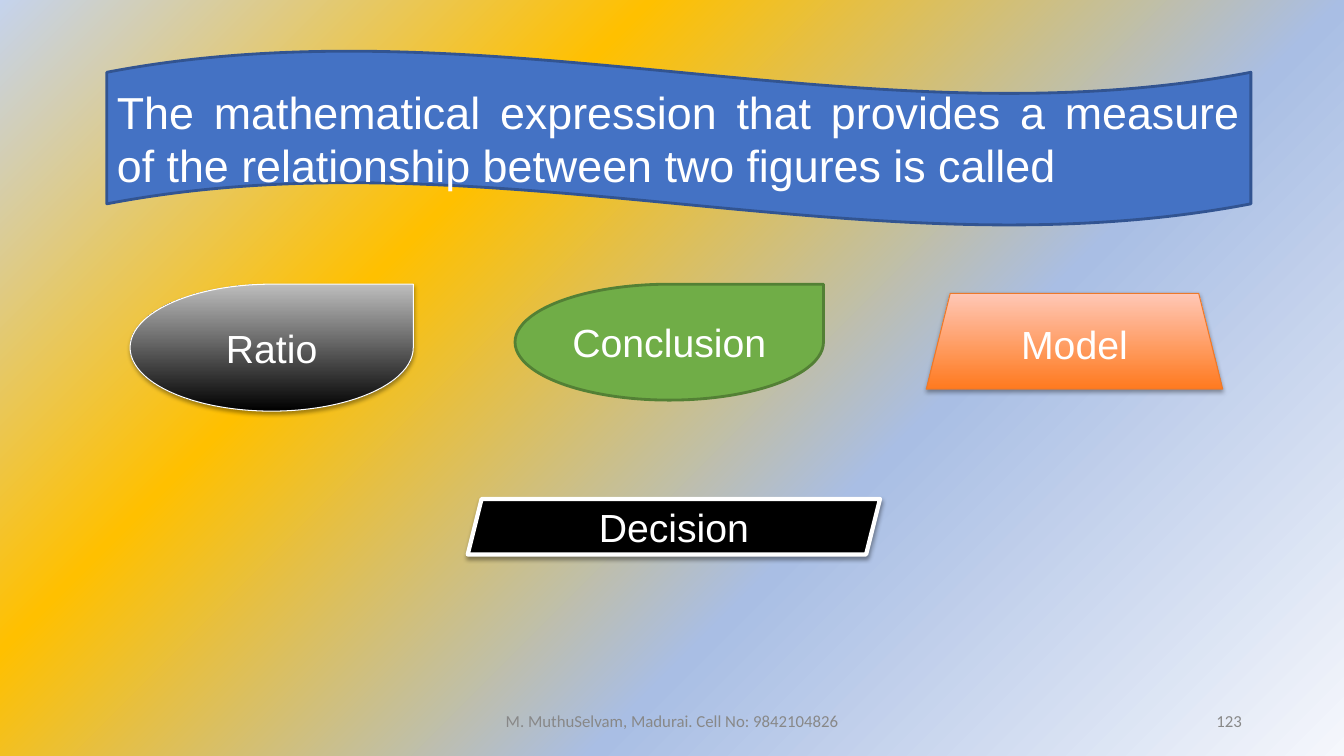
from dataclasses import dataclass

from lxml import etree
from pptx import Presentation
from pptx import util as u
from pptx.dml.color import RGBColor
from pptx.enum import shapes, text
from pptx.oxml import parse_xml
from pptx.oxml.ns import nsdecls, qn

WHITE = RGBColor(0xFF, 0xFF, 0xFF)
BLACK = RGBColor(0, 0, 0)
SILVER = RGBColor(0xBD, 0xBD, 0xBD)
GRAY = RGBColor(0x88, 0x88, 0x88)
BLUE = RGBColor(0x44, 0x72, 0xC4)
DARK_BLUE = RGBColor(0x32, 0x54, 0x91)
GREEN = RGBColor(0x70, 0xAD, 0x47)
DARK_GREEN = RGBColor(0x53, 0x80, 0x35)
ORANGE = RGBColor(0xFF, 0x7A, 0x1F)
PEACH = RGBColor(0xFF, 0xC7, 0xB6)
DARK_ORANGE = RGBColor(0xEC, 0x79, 0x2B)
GOLD = RGBColor(0xFF, 0xC0, 0x00)
PALE_BLUE = RGBColor(0xA9, 0xBE, 0xE4)
MIST = RGBColor(0xF5, 0xF7, 0xFC)
ICE = RGBColor(0xC5, 0xD3, 0xED)

BACKDROP = ((0, MIST), (36, PALE_BLUE), (69, GOLD), (100, ICE))
QUESTION = ("The mathematical expression that provides a measure "
            "of the relationship between two figures is called")

Box = tuple[float, float, float, float]  # left, top, width, height in points
BANNER: Box = (76.3, 36, 817.2, 125.3)


@dataclass(frozen=True)
class Figure:
    kind: shapes.MSO_SHAPE
    box: Box
    fill: tuple[RGBColor, ...]  # one colour, or bottom and top of a gradient
    line: RGBColor
    line_width: float
    label: str = ""
    shadow_alpha: int = 0  # percent; 0 means no shadow


@dataclass(frozen=True)
class Note:
    box: Box
    label: str
    align: text.PP_ALIGN


WAVE = Figure(shapes.MSO_SHAPE.WAVE, BANNER, (BLUE,), DARK_BLUE, 2)
ANSWERS = (
    Figure(shapes.MSO_SHAPE.TEAR, (92.9, 203, 202.3, 90.7),
           (BLACK, SILVER), WHITE, 0.75, "Ratio", 35),
    Figure(shapes.MSO_SHAPE.TRAPEZOID, (661.7, 209.5, 211.7, 68.4),
           (ORANGE, PEACH), DARK_ORANGE, 0.75, "Model", 35),
    Figure(shapes.MSO_SHAPE.PARALLELOGRAM, (334.1, 356.4, 294.5, 39.6),
           (BLACK,), WHITE, 3, "Decision", 38),
    Figure(shapes.MSO_SHAPE.TEAR, (367.9, 203, 220.3, 82.8),
           (GREEN,), DARK_GREEN, 2, "Conclusion"),
)
NOTES = (
    Note((318.2, 500.4, 324, 28.8),
         "M. MuthuSelvam, Madurai. Cell No: 9842104826", text.PP_ALIGN.CENTER),
    Note((678.2, 500.4, 216, 28.8), "123", text.PP_ALIGN.RIGHT),
)


def write(frame, label: str, size: float, font: str, color: RGBColor,
          align: text.PP_ALIGN) -> None:
    frame.word_wrap = True
    frame.auto_size = text.MSO_AUTO_SIZE.NONE
    frame.vertical_anchor = text.MSO_ANCHOR.MIDDLE
    paragraph = frame.paragraphs[0]
    paragraph.alignment = align
    run = paragraph.add_run()
    run.text = label
    run.font.size = u.Pt(size)
    run.font.name = font
    run.font.color.rgb = color


def add_shadow(shape, alpha: int) -> None:
    effects = shape.element.spPr.find(qn("a:effectLst"))
    shadow = etree.SubElement(effects, qn("a:outerShdw"), blurRad=str(u.Pt(3.1)),
                              dist=str(u.Pt(1.8)), dir="5400000", rotWithShape="0")
    color = etree.SubElement(shadow, qn("a:srgbClr"), val=str(BLACK))
    etree.SubElement(color, qn("a:alpha"), val=str(alpha * 1000))


def add_figure(slide, figure: Figure) -> None:
    shape = slide.shapes.add_shape(figure.kind, *map(u.Pt, figure.box))
    if len(figure.fill) == 1:
        shape.fill.solid()
        shape.fill.fore_color.rgb = figure.fill[0]
    else:
        shape.fill.gradient()
        shape.fill.gradient_angle = 90
        for stop, color in zip(shape.fill.gradient_stops, figure.fill):
            stop.color.rgb = color
    shape.line.color.rgb = figure.line
    shape.line.width = u.Pt(figure.line_width)
    shape.shadow.inherit = False
    if figure.shadow_alpha:
        add_shadow(shape, figure.shadow_alpha)
    if figure.label:
        write(shape.text_frame, figure.label, 28, "Arial", WHITE, text.PP_ALIGN.CENTER)


def add_note(slide, note: Note) -> None:
    box = slide.shapes.add_textbox(*map(u.Pt, note.box))
    write(box.text_frame, note.label, 12, "Calibri", GRAY, note.align)


def paint_background(slide) -> None:
    """Gradient spreading from the bottom right corner."""
    slide.background.fill.solid()
    stops = "".join(f'<a:gs pos="{position * 1000}"><a:srgbClr val="{color}"/></a:gs>'
                    for position, color in BACKDROP)
    gradient = parse_xml(
        f'<a:gradFill {nsdecls("a")} rotWithShape="1"><a:gsLst>{stops}</a:gsLst>'
        '<a:path path="circle"><a:fillToRect l="100000" t="100000"/></a:path>'
        '<a:tileRect r="-100000" b="-100000"/></a:gradFill>')
    properties = slide.element.find(".//" + qn("p:bgPr"))
    properties.replace(properties[0], gradient)


def add_question(slide) -> None:
    add_figure(slide, WAVE)
    question = slide.shapes.title
    question.left, question.top, question.width, question.height = map(u.Pt, BANNER)
    write(question.text_frame, QUESTION, 32, "Arial", WHITE, text.PP_ALIGN.JUSTIFY)
    # Bring the question in front of its banner
    slide.shapes.element.append(question.element)


def main() -> None:
    deck = Presentation()
    deck.slide_width, deck.slide_height = u.Pt(960), u.Pt(540)
    slide = deck.slides.add_slide(deck.slide_layouts[5])
    paint_background(slide)

    # Question banner
    add_question(slide)

    # Possible answers
    for answer in ANSWERS:
        add_figure(slide, answer)

    # Footer and page number
    for note in NOTES:
        add_note(slide, note)

    deck.save("out.pptx")


if __name__ == "__main__":
    main()
